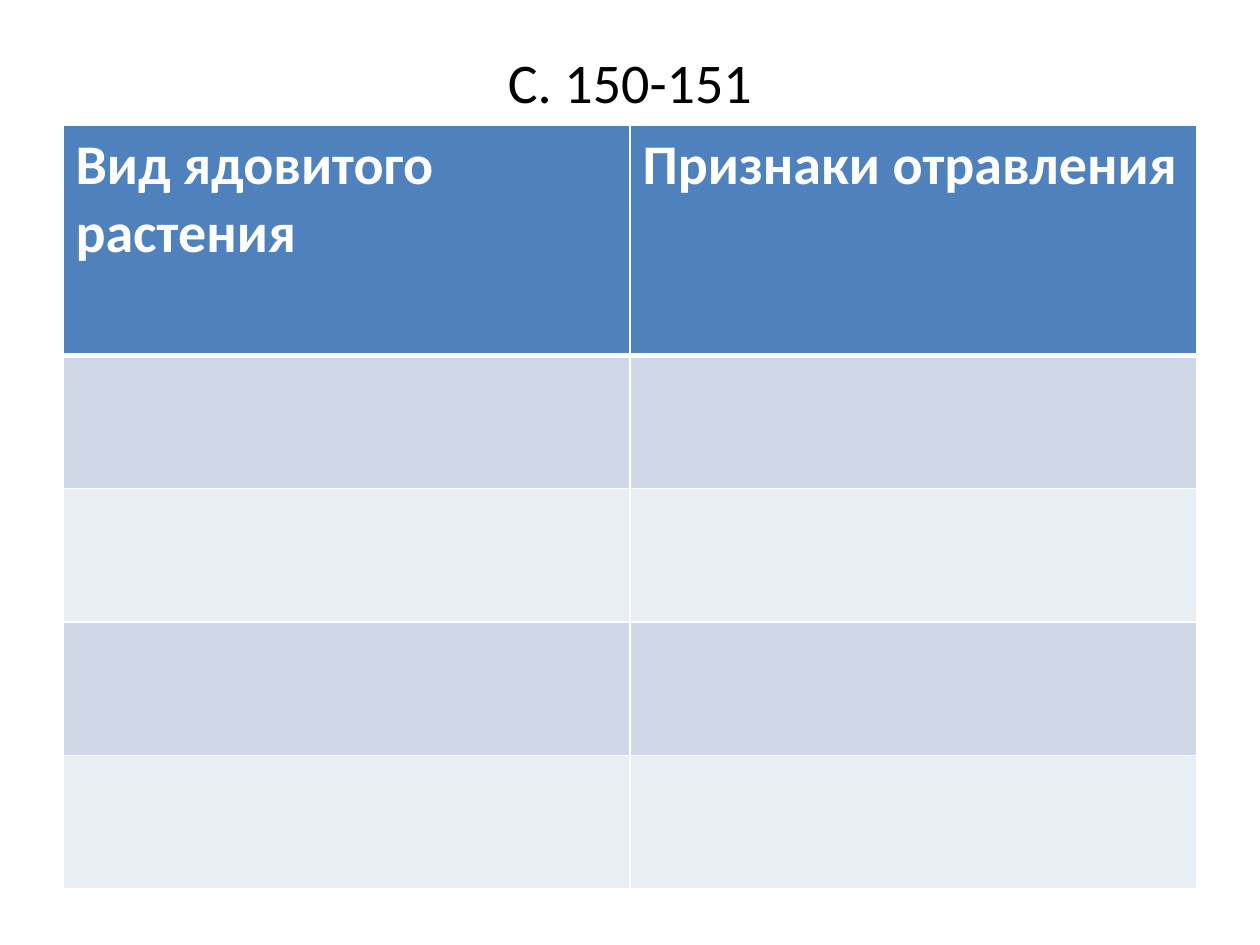
from lxml.etree import SubElement
from pptx import Presentation
from pptx.dml.color import RGBColor
from pptx.enum.text import MSO_ANCHOR, PP_ALIGN
from pptx.oxml.ns import qn
from pptx.util import Pt

COLORS = {
    "title": "000000",
    "header": "4F81BD",
    "header_text": "FFFFFF",
    "border": "FFFFFF",
    "odd_row": "D0D8E8",
    "even_row": "E9EDF4",
}
HEADINGS = ("Вид ядовитого растения", "Признаки отравления")
EMPTY_ROWS = 4
LEFT, WIDTH = 36, 648
TITLE_TOP, TITLE_HEIGHT = 21.6, 49.7
TABLE_TOP = 71.3
HEADER_HEIGHT, ROW_HEIGHT = 131.8, 76.2


def add_run(paragraph, text, color, bold=False):
    run = paragraph.add_run()
    run.text = text
    run.font.name = "Calibri"
    run.font.size = Pt(32)
    run.font.bold = bold
    run.font.color.rgb = RGBColor.from_string(COLORS[color])


def add_title(slide, text):
    title = slide.shapes.add_textbox(
        Pt(LEFT), Pt(TITLE_TOP), Pt(WIDTH), Pt(TITLE_HEIGHT))
    frame = title.text_frame
    frame.word_wrap = True
    frame.vertical_anchor = MSO_ANCHOR.MIDDLE
    paragraph = frame.paragraphs[0]
    paragraph.alignment = PP_ALIGN.CENTER
    add_run(paragraph, text, "title")


def set_borders(cell, top, bottom):
    """Draw all four sides; top and bottom are line widths in points."""
    properties = cell._tc.get_or_add_tcPr()
    for side, width in (("L", 1), ("R", 1), ("T", top), ("B", bottom)):
        line = SubElement(properties, qn(f"a:ln{side}"), w=str(Pt(width)))
        fill = SubElement(line, qn("a:solidFill"))
        SubElement(fill, qn("a:srgbClr"), val=COLORS["border"])


def style_cell(cell, color, top=1, bottom=1):
    set_borders(cell, top, bottom)
    cell.fill.solid()
    cell.fill.fore_color.rgb = RGBColor.from_string(COLORS[color])


def add_plant_table(slide):
    height = HEADER_HEIGHT + EMPTY_ROWS * ROW_HEIGHT
    table = slide.shapes.add_table(
        EMPTY_ROWS + 1, len(HEADINGS),
        Pt(LEFT), Pt(TABLE_TOP), Pt(WIDTH), Pt(height)).table
    for row_number, row in enumerate(table.rows):
        row.height = Pt(ROW_HEIGHT if row_number else HEADER_HEIGHT)
        for cell, heading in zip(row.cells, HEADINGS):
            if row_number == 0:
                style_cell(cell, "header", bottom=3)
                add_run(cell.text_frame.paragraphs[0], heading,
                        "header_text", bold=True)
            else:
                style_cell(cell, "odd_row" if row_number % 2 else "even_row",
                           top=3 if row_number == 1 else 1)


def main():
    presentation = Presentation()
    presentation.slide_width = Pt(720)
    presentation.slide_height = Pt(540)
    slide = presentation.slides.add_slide(presentation.slide_layouts[6])
    add_title(slide, "С. 150-151")
    add_plant_table(slide)
    presentation.save("out.pptx")


if __name__ == "__main__":
    main()
